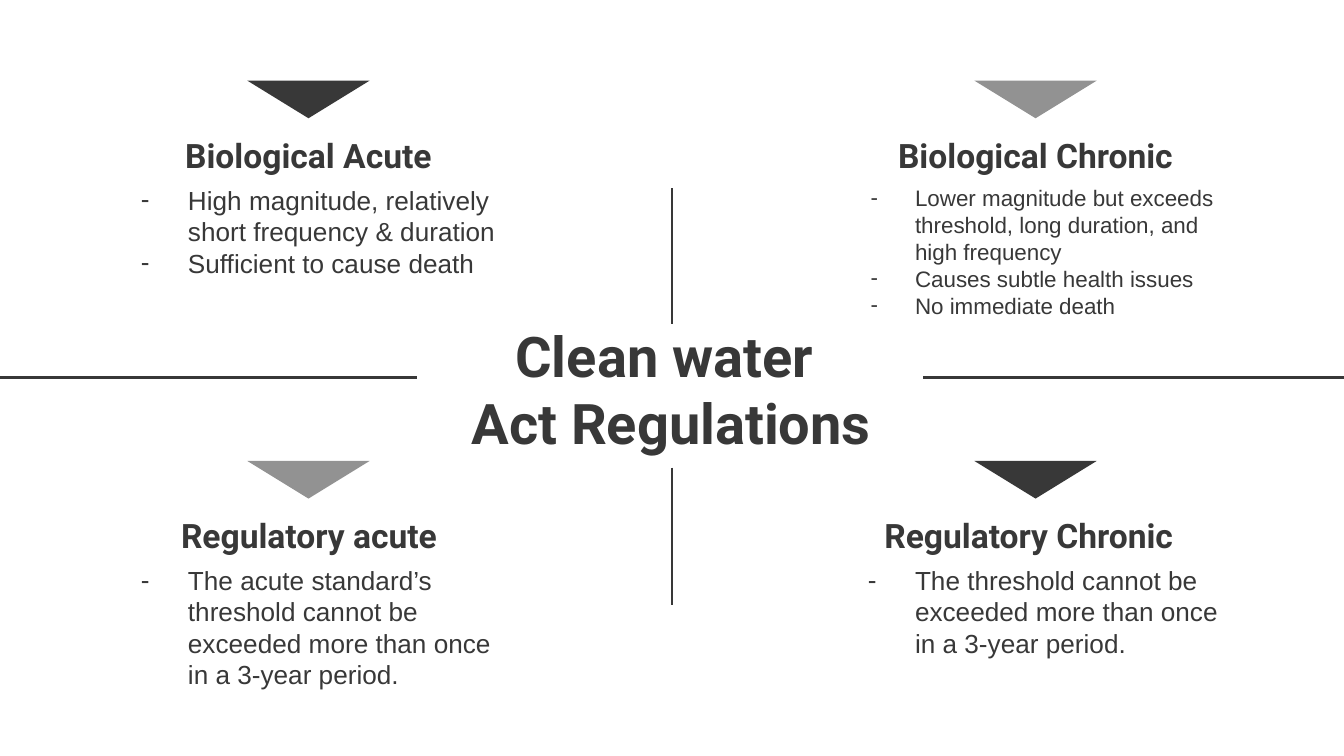
"""Build the four-quadrant slide on Clean Water Act regulations."""
import pptx
import pptx.dml.color
import pptx.enum.shapes
import pptx.enum.text
import pptx.oxml.ns
import pptx.util
from lxml import etree

Inches = pptx.util.Inches
COLORS = {"dark": "383838", "grey": "929292"}
QUADRANTS = [
    (0.8, 0.6, "dark", "Biological Acute", 0.95, 2.69, 14, 0.35,
     ["High magnitude, relatively short frequency & duration",
      "Sufficient to cause death"]),
    (0.8, 3.43, "grey", "Regulatory acute", 0.88, 2.84, 14, 0.35,
     ["The acute standard’s threshold cannot be exceeded more than once in a 3-year period."]),
    (6.21, 0.6, "grey", "Biological Chronic", 6.24, 2.93, 12, 0.33,
     ["Lower magnitude but exceeds threshold, long duration, and high frequency",
      "Causes subtle health issues",
      "No immediate death"]),
    (6.21, 3.43, "dark", "Regulatory Chronic", 6.12, 3.07, 14, 0.35,
     ["The threshold cannot be exceeded more than once in a 3-year period."]),
]
DIVIDERS = [(0, 2.81, 3.1, 2.81), (6.87, 2.81, 10, 2.81),
            (5, 3.48, 5, 4.5), (5, 1.4, 5, 2.41)]


def rgb(name):
    return pptx.dml.color.RGBColor.from_string(COLORS[name])


def write(box, lines, size, font, bold, align, anchor):
    frame = box.text_frame
    frame.word_wrap = True
    frame.auto_size = pptx.enum.text.MSO_AUTO_SIZE.NONE
    frame.vertical_anchor = anchor
    frame.margin_left = frame.margin_right = Inches(0.1)
    frame.margin_top = frame.margin_bottom = Inches(0.1)
    frame.text = "\n".join(lines)
    for paragraph in frame.paragraphs:
        paragraph.alignment = align
        paragraph.line_spacing = 1.0
        paragraph.space_before = paragraph.space_after = pptx.util.Pt(0)
        paragraph.font.size = pptx.util.Pt(size)
        paragraph.font.name = font
        paragraph.font.bold = bold
        paragraph.font.color.rgb = rgb("dark")
    return frame.paragraphs


align = pptx.enum.text.PP_ALIGN
anchor = pptx.enum.text.MSO_ANCHOR
qn = pptx.oxml.ns.qn

deck = pptx.Presentation()
deck.slide_width = Inches(10)
deck.slide_height = deck.slide_width * 9 // 16
slide = deck.slides.add_slide(deck.slide_layouts[5])
shapes = slide.shapes

title = shapes.title
title.left, title.top = Inches(1.51), Inches(2.29)
title.width, title.height = Inches(6.97), Inches(0.58)
write(title, ["Clean water ", "Act Regulations"], 30, "Roboto", True, align.CENTER, anchor.TOP)

for left, top, color, heading, heading_left, heading_width, size, hanging, points in QUADRANTS:
    marker = shapes.add_shape(pptx.enum.shapes.MSO_SHAPE.ISOSCELES_TRIANGLE,
                              Inches(left + 1.04), Inches(top), Inches(0.91), Inches(0.28))
    marker.rotation = 180
    marker.shadow.inherit = False
    marker.fill.solid()
    marker.fill.fore_color.rgb = rgb(color)
    marker.line.fill.background()

    heading_box = shapes.add_textbox(Inches(heading_left), Inches(top + 0.37),
                                     Inches(heading_width), Inches(0.37))
    write(heading_box, [heading], 18, "Roboto", True, align.CENTER, anchor.MIDDLE)

    points_box = shapes.add_textbox(Inches(left), Inches(top + 0.67), Inches(2.99), Inches(0.88))
    for paragraph in write(points_box, points, size, "Arial", False, align.LEFT, anchor.TOP):
        properties = paragraph._p.get_or_add_pPr()
        properties.set("marL", str(Inches(0.5)))
        properties.set("indent", str(-Inches(hanging)))
        bullet_color = etree.Element(qn("a:buClr"))
        etree.SubElement(bullet_color, qn("a:srgbClr"), val=COLORS["dark"])
        bullet_font = etree.Element(qn("a:buFont"), typeface="Arial")
        bullet = etree.Element(qn("a:buChar"), char="-")
        properties.find(qn("a:defRPr")).addprevious(bullet_color)
        bullet_color.addnext(bullet_font)
        bullet_font.addnext(bullet)

for ends in DIVIDERS:
    divider = shapes.add_connector(pptx.enum.shapes.MSO_CONNECTOR.STRAIGHT, *map(Inches, ends))
    divider.line.color.rgb = rgb("dark")
    divider.line.width = pptx.util.Pt(1.5)
    etree.SubElement(divider._element.spPr, qn("a:effectLst"))

deck.save("out.pptx")
